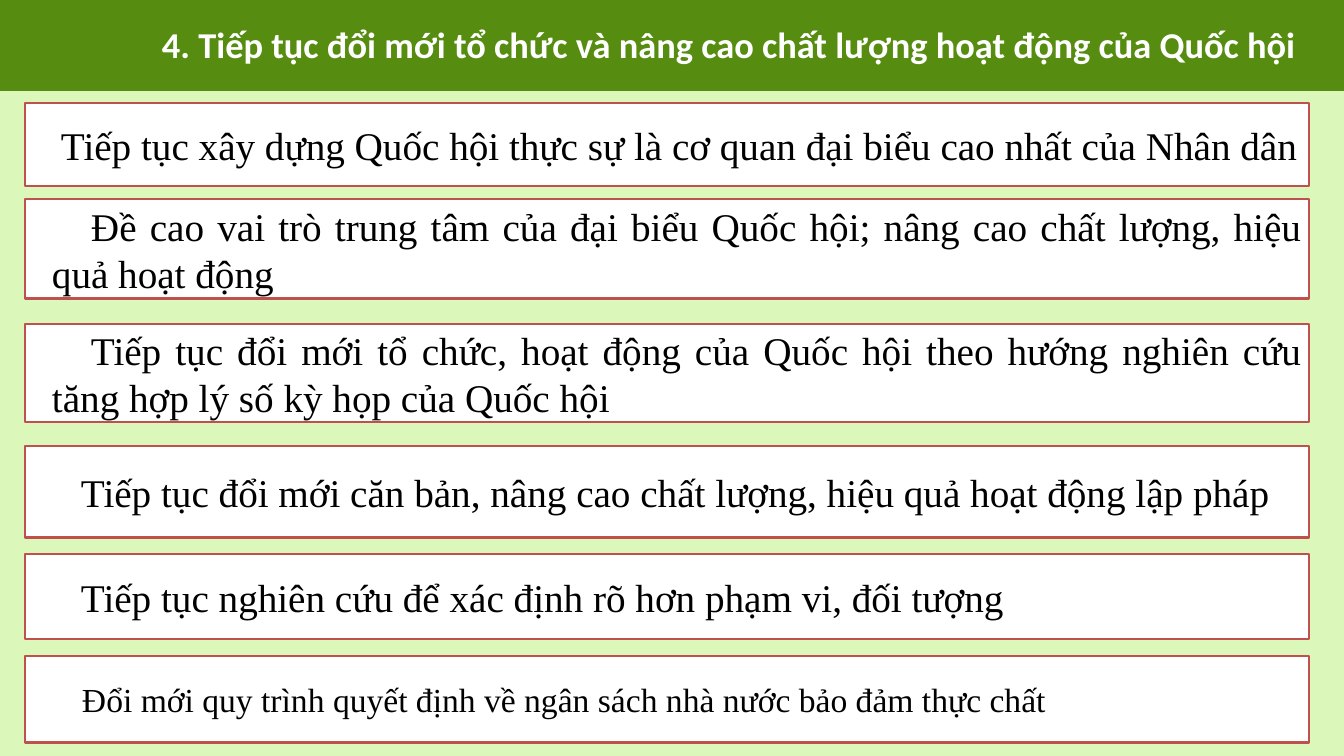
from dataclasses import dataclass

from pptx import Presentation
from pptx.dml.color import RGBColor
from pptx.enum.shapes import MSO_SHAPE
from pptx.enum.text import MSO_ANCHOR, MSO_AUTO_SIZE, PP_ALIGN
from pptx.util import Pt

RECTANGLE = MSO_SHAPE.RECTANGLE
MIDDLE = MSO_ANCHOR.MIDDLE
NO_AUTOFIT = MSO_AUTO_SIZE.NONE
JUSTIFY = PP_ALIGN.JUSTIFY

TITLE = "4. Tiếp tục đổi mới tổ chức và nâng cao chất lượng hoạt động của Quốc hội"


@dataclass(frozen=True)
class Theme:
    header: RGBColor = RGBColor.from_string("568D11")
    page: RGBColor = RGBColor.from_string("DCF7BA")
    card: RGBColor = RGBColor.from_string("FFFFFF")
    border: RGBColor = RGBColor.from_string("C0504D")
    ink: RGBColor = RGBColor.from_string("000000")
    title_ink: RGBColor = RGBColor.from_string("FFFFFF")
    title_font: str = "Calibri"
    body_font: str = "Times New Roman"
    title_size: int = 26
    body_size: int = 28
    small_size: int = 24


THEME = Theme()

# top, height, left margin, first-line indent, type size, text
CARDS = [
    (103, 83, 0, 29, THEME.body_size,
     "Tiếp tục xây dựng Quốc hội thực sự là cơ quan đại biểu cao nhất của Nhân dân"),
    (199, 100, 20, 39, THEME.body_size,
     "Đề cao vai trò trung tâm của đại biểu Quốc hội; nâng cao chất lượng, hiệu quả hoạt động"),
    (324, 98, 20, 39, THEME.body_size,
     "Tiếp tục đổi mới tổ chức, hoạt động của Quốc hội theo hướng nghiên cứu "
     "tăng hợp lý số kỳ họp của Quốc hội"),
    (446, 92, 0, 49, THEME.body_size,
     "Tiếp tục đổi mới căn bản, nâng cao chất lượng, hiệu quả hoạt động lập pháp"),
    (554, 85, 0, 49, THEME.body_size,
     "Tiếp tục nghiên cứu để xác định rõ hơn phạm vi, đối tượng"),
    (656, 87, 0, 50, THEME.small_size,
     "Đổi mới quy trình quyết định về ngân sách nhà nước bảo đảm thực chất"),
]

SLIDE_WIDTH, SLIDE_HEIGHT = 1344, 756
HEADER_HEIGHT = 92
CARD_LEFT, CARD_WIDTH = 25, 1284
TITLE_BOX = (147, 17, 1162, 54)


def px(length):
    return round(length * 914400 / 100.8)


def add_rectangle(slide, left, top, width, height, fill):
    shape = slide.shapes.add_shape(RECTANGLE, px(left), px(top), px(width), px(height))
    shape.shadow.inherit = False
    shape.fill.solid()
    shape.fill.fore_color.rgb = fill
    return shape


def write_text(shape, text, font, size, color, insets, margin, indent, bold=False):
    frame = shape.text_frame
    frame.text = text
    frame.word_wrap = True
    frame.auto_size = NO_AUTOFIT
    frame.vertical_anchor = MIDDLE
    frame.margin_left = frame.margin_right = px(insets[0])
    frame.margin_top = frame.margin_bottom = px(insets[1])
    paragraph = frame.paragraphs[0]
    paragraph.alignment = JUSTIFY
    paragraph.font.name = font
    paragraph.font.size = Pt(size)
    paragraph.font.bold = bold
    paragraph.font.color.rgb = color
    properties = paragraph._p.get_or_add_pPr()
    properties.set("marL", str(px(margin)))
    properties.set("indent", str(px(indent)))


def main():
    presentation = Presentation()
    presentation.slide_width = px(SLIDE_WIDTH)
    presentation.slide_height = px(SLIDE_HEIGHT)
    slide = presentation.slides.add_slide(presentation.slide_layouts[5])
    slide.background.fill.solid()
    slide.background.fill.fore_color.rgb = THEME.header

    title = slide.shapes.title
    title.left, title.top, title.width, title.height = map(px, TITLE_BOX)
    write_text(title, TITLE, THEME.title_font, THEME.title_size, THEME.title_ink,
               (10, 5), 5, 0, bold=True)

    page = add_rectangle(slide, 0, HEADER_HEIGHT, SLIDE_WIDTH,
                         SLIDE_HEIGHT - HEADER_HEIGHT, THEME.page)
    page.line.color.rgb = THEME.page
    page.line.width = Pt(1.25)

    for top, height, margin, indent, size, text in CARDS:
        card = add_rectangle(slide, CARD_LEFT, top, CARD_WIDTH, height, THEME.card)
        card.line.color.rgb = THEME.border
        card.line.width = Pt(2)
        write_text(card, text, THEME.body_font, size, THEME.ink, (7, 4), margin, indent)

    presentation.save("out.pptx")


if __name__ == "__main__":
    main()
